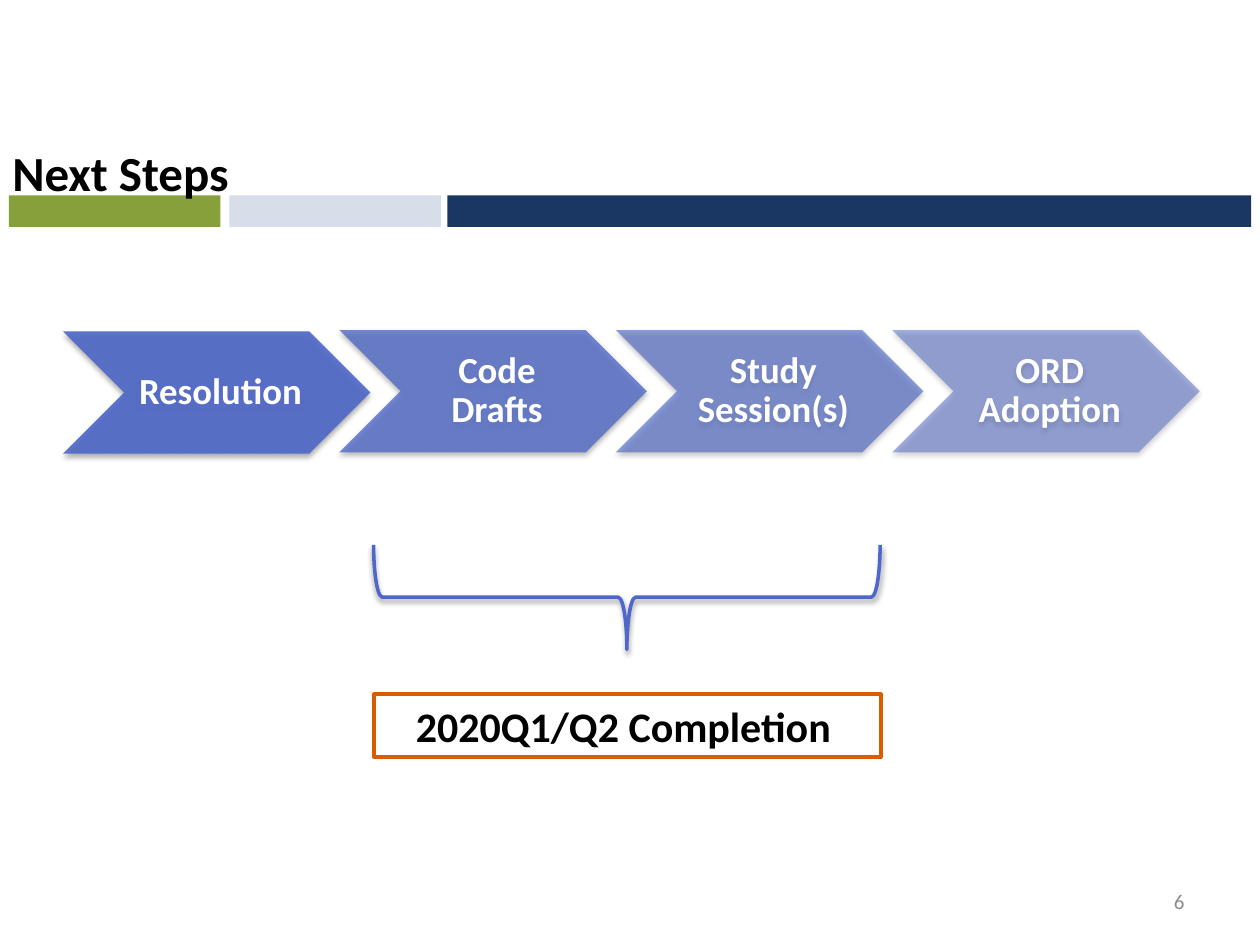
from lxml import etree
from pptx import Presentation
from pptx.dml.color import RGBColor
from pptx.enum.shapes import MSO_SHAPE
from pptx.enum.text import MSO_ANCHOR, PP_ALIGN
from pptx.oxml import parse_xml
from pptx.oxml.ns import nsdecls, qn
from pptx.util import Inches, Pt

RECT = MSO_SHAPE.RECTANGLE
CHEVRON = MSO_SHAPE.CHEVRON
BRACE = MSO_SHAPE.RIGHT_BRACE
TOP, MIDDLE, BOTTOM = MSO_ANCHOR.TOP, MSO_ANCHOR.MIDDLE, MSO_ANCHOR.BOTTOM
LEFT, CENTER, RIGHT = PP_ALIGN.LEFT, PP_ALIGN.CENTER, PP_ALIGN.RIGHT
BLUE = "4E67C8"

deck = Presentation()
deck.slide_width, deck.slide_height = Inches(10), Inches(7.5)
slide = deck.slides.add_slide(deck.slide_layouts[6])
shapes = slide.shapes


def draw(kind, place, fill=None, line=None, width=0):
    shape = shapes.add_shape(kind, *map(Inches, place))
    shape.shadow.inherit = False
    for part, color in ((shape.fill, fill), (shape.line.fill, line)):
        if color:
            part.solid()
            part.fore_color.rgb = RGBColor.from_string(color)
        else:
            part.background()
    if line:
        shape.line.width = Pt(width)
    return shape


def write(shape, text, size, color, bold, align, anchor, inset):
    frame = shape.text_frame
    left, top, right, bottom = map(Inches, inset)
    style = {
        "word_wrap": True,
        "vertical_anchor": anchor,
        "margin_left": left,
        "margin_top": top,
        "margin_right": right,
        "margin_bottom": bottom,
    }
    for name, value in style.items():
        setattr(frame, name, value)
    line = frame.paragraphs[0]
    line.alignment = align
    run = line.add_run()
    run.text = text
    for name, value in {"name": "Calibri", "size": Pt(size), "bold": bold}.items():
        setattr(run.font, name, value)
    run.font.color.rgb = RGBColor.from_string(color)
    return line


for left, width, color in (
    (3.55, 6.38, "1A3662"),
    (0.07, 1.68, "86A13C"),
    (1.82, 1.68, "D7DEEA"),
):
    draw(RECT, (left, 1.55, width, 0.25), color)

inset = (0.1, 0.05, 0.1, 0.05)
title = shapes.add_textbox(*map(Inches, (0, 0.15, 9.44, 1.5)))
write(title, "Next Steps", 28, "000000", True, LEFT, BOTTOM, inset)
number = shapes.add_textbox(*map(Inches, (7.17, 6.95, 2.33, 0.4)))
write(number, "6", 12, "8C8C8C", False, RIGHT, MIDDLE, inset)

shaded = []
steps = (
    ("Resolution", 2.63, 90),
    ("Code Drafts", 2.62, 77),
    ("Study Session(s)", 2.62, 63),
    ("ORD Adoption", 2.62, 50),
)
for i, (text, top, alpha) in enumerate(steps):
    step = draw(CHEVRON, (0.5 + i * 2.194, top, 2.44, 0.97), BLUE)
    line = write(step, text, 21, "FFFFFF", True, CENTER, MIDDLE, (0.09, 0.03, 0.03, 0.03))
    line.line_spacing = 0.9
    color = step.fill._xPr.find(qn("a:solidFill"))[0]
    etree.SubElement(color, qn("a:alpha"), val=str(alpha * 1000))
    shaded.append((step, 35, 1.8))

brace = draw(BRACE, (4.56, 2.73, 0.83, 4.02), None, BLUE, 2)
brace.rotation = 90
shaded.append((brace, 38, 1.6))

for shape, alpha, gap in shaded:
    effects = shape.element.spPr.find(qn("a:effectLst"))
    effects.append(parse_xml(
        f'<a:outerShdw {nsdecls("a")} blurRad="{Pt(3.1)}" dist="{Pt(gap)}" '
        f'dir="5400000" rotWithShape="0"><a:srgbClr val="000000">'
        f'<a:alpha val="{alpha * 1000}"/></a:srgbClr></a:outerShdw>'
    ))

goal = draw(RECT, (2.97, 5.51, 4.02, 0.5), "FFFFFF", "D85C00", 2.25)
write(goal, "2020Q1/Q2 Completion", 24, "000000", True, LEFT, TOP, (0.33, 0.05, 0.1, 0.05))

deck.save("out.pptx")
